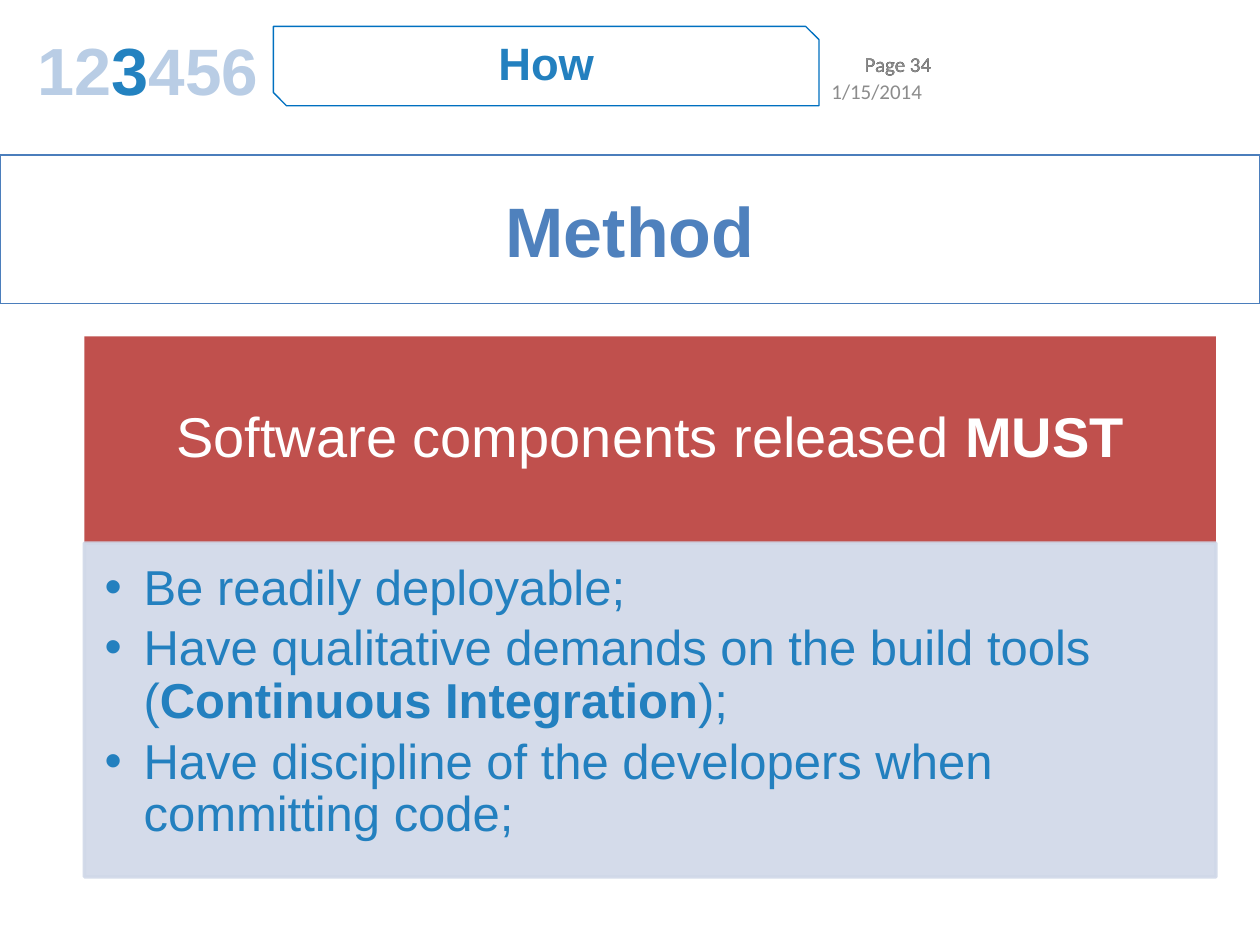
"""Build the Method slide: progress header, title band and requirements panel."""
from dataclasses import dataclass
from typing import Optional

from pptx import Presentation
from pptx.dml.color import RGBColor
from pptx.enum.shapes import MSO_SHAPE as Preset
from pptx.enum.text import MSO_ANCHOR as Anchor, PP_ALIGN as Align
from pptx.oxml.xmlchemy import OxmlElement
from pptx.util import Inches, Pt

COLUMNS, ROWS = 100, 75
WIDTH, HEIGHT = Inches(10), Inches(7.5)


@dataclass(frozen=True)
class Theme:
    heading: str = "Arial"
    body: str = "Calibri"
    blue: str = "2380BF"
    active: str = "2382C0"
    faded: str = "B9CDE5"
    title: str = "4F81BD"
    title_line: str = "4B7EBC"
    tab_line: str = "0070C0"
    red: str = "C0504D"
    panel: str = "D0D8E8"
    white: str = "FFFFFF"
    black: str = "000000"
    grey: str = "8C8C8C"
    small: float = 12
    tab: float = 25.9
    items: float = 28
    banner: float = 32
    step: float = 38.1
    later_step: float = 37.5
    headline: float = 40


@dataclass(frozen=True)
class Span:
    text: str
    bold: Optional[bool] = None
    color: Optional[str] = None
    size: Optional[float] = None


@dataclass(frozen=True)
class Style:
    size: float
    color: str
    font: str = Theme.heading
    bold: Optional[bool] = None
    align: Align = Align.CENTER
    spacing: Optional[float] = None
    after: float = 0
    bullet: bool = False


@dataclass(frozen=True)
class Block:
    column: float
    row: float
    columns: float
    rows: float
    style: Style
    paragraphs: tuple[tuple[Span, ...], ...]
    preset: Optional[Preset] = None
    fill: Optional[str] = None
    line: Optional[str] = None
    line_width: float = 0.75
    opacity: int = 100
    anchor: Anchor = Anchor.MIDDLE
    insets: tuple[float, float, float, float] = (0.1, 0.05, 0.1, 0.05)


def add_bullet(para) -> None:
    """Give a paragraph a hanging round bullet."""
    properties = para._p.get_or_add_pPr()
    properties.set("marL", str(Inches(0.31)))
    properties.set("indent", str(-Inches(0.31)))
    for tag, name, value in (("a:buFont", "typeface", Theme.heading), ("a:buChar", "char", "•")):
        element = OxmlElement(tag)
        element.set(name, value)
        properties.append(element)


def write_paragraph(para, spans: tuple[Span, ...], style: Style) -> None:
    """Fill one paragraph with styled spans."""
    para.alignment = style.align
    if style.spacing:
        para.line_spacing = style.spacing
    if style.after:
        para.space_after = Pt(style.after)
    if style.bullet:
        para.level = 1
        add_bullet(para)
    para.font.name = style.font
    para.font.size = Pt(style.size)
    para.font.bold = style.bold
    para.font.color.rgb = RGBColor.from_string(style.color)
    for span in spans:
        run = para.add_run()
        run.text = span.text
        if span.bold is not None:
            run.font.bold = span.bold
        if span.color:
            run.font.color.rgb = RGBColor.from_string(span.color)
        if span.size:
            run.font.size = Pt(span.size)


def paint(box, block: Block) -> None:
    """Set the fill, outline and opacity of a shape."""
    box.shadow.inherit = False
    paints = []
    if block.fill:
        box.fill.solid()
        paints.append((box.fill.fore_color, block.fill))
    else:
        box.fill.background()
    if block.line:
        box.line.width = Pt(block.line_width)
        paints.append((box.line.color, block.line))
    else:
        box.line.fill.background()
    for target, color in paints:
        target.rgb = RGBColor.from_string(color)
    if block.opacity < 100:
        for color in box._element.spPr.iter("{*}srgbClr"):
            alpha = OxmlElement("a:alpha")
            alpha.set("val", str(block.opacity * 1000))
            color.append(alpha)


def draw(page, block: Block) -> None:
    """Place a block on the grid with its text."""
    place = (
        round(WIDTH * block.column / COLUMNS),
        round(HEIGHT * block.row / ROWS),
        round(WIDTH * block.columns / COLUMNS),
        round(HEIGHT * block.rows / ROWS),
    )
    if block.preset is None:
        box = page.shapes.add_textbox(*place)
    else:
        box = page.shapes.add_shape(block.preset, *place)
        paint(box, block)
    frame = box.text_frame
    frame.word_wrap = True
    frame.vertical_anchor = block.anchor
    frame.margin_left, frame.margin_top, frame.margin_right, frame.margin_bottom = map(Inches, block.insets)
    for index, spans in enumerate(block.paragraphs):
        para = frame.add_paragraph() if index else frame.paragraphs[0]
        write_paragraph(para, spans, block.style)


def main() -> None:
    """Compose the slide and save it."""
    theme = Theme()
    banner = Style(theme.banner, theme.white, spacing=0.9)
    items = Style(theme.items, theme.blue, align=Align.LEFT, spacing=0.9, after=4.2, bullet=True)
    steps = Style(theme.step, theme.faded, bold=True, align=Align.JUSTIFY, spacing=0.8)
    tab = Style(theme.tab, theme.blue, bold=True, spacing=0.9)
    headline = Style(theme.headline, theme.title, bold=True)
    date = Style(theme.small, theme.grey, theme.body, align=Align.LEFT)
    requirements = (
        (Span("Be readily deployable;"),),
        (
            Span("Have qualitative demands on the build tools ("),
            Span("Continuous Integration", bold=True),
            Span(");"),
        ),
        (Span("Have discipline of the developers when committing code;"),),
    )
    progress = (Span("12"), Span("3", color=theme.active), Span("456", size=theme.later_step))
    page_numbers = [
        Block(63.3, 3.1, 11.6, 4, Style(theme.small, color, theme.body, align=Align.RIGHT), ((Span("Page 34"),),))
        for color in (theme.black, theme.grey)
    ]
    blocks = [
        Block(6.7, 26.7, 89.8, 16.4, banner,
              ((Span("Software components released "), Span("MUST", bold=True)),),
              Preset.RECTANGLE, fill=theme.red, insets=(0.25, 0.14, 0.25, 0.14)),
        Block(6.7, 43.1, 89.8, 26.5, items, requirements, Preset.RECTANGLE,
              fill=theme.panel, line=theme.panel, line_width=2, opacity=90,
              anchor=Anchor.TOP, insets=(0.16, 0.16, 0.22, 0.24)),
        *page_numbers,
        Block(21.7, 2.1, 43.3, 6.3, tab, ((Span("How"),),), Preset.SNIP_2_DIAG_RECTANGLE, line=theme.tab_line),
        Block(2, 2.9, 73.2, 6.3, steps, (progress,)),
        Block(65, 5.2, 12.5, 4, date, ((Span("1/15/2014"),),)),
        Block(0, 12.3, 100, 11.8, headline, ((Span("Method"),),), Preset.RECTANGLE, line=theme.title_line),
    ]
    deck = Presentation()
    deck.slide_width, deck.slide_height = WIDTH, HEIGHT
    page = deck.slides.add_slide(deck.slide_layouts[6])
    for block in blocks:
        draw(page, block)
    deck.save("out.pptx")


if __name__ == "__main__":
    main()
